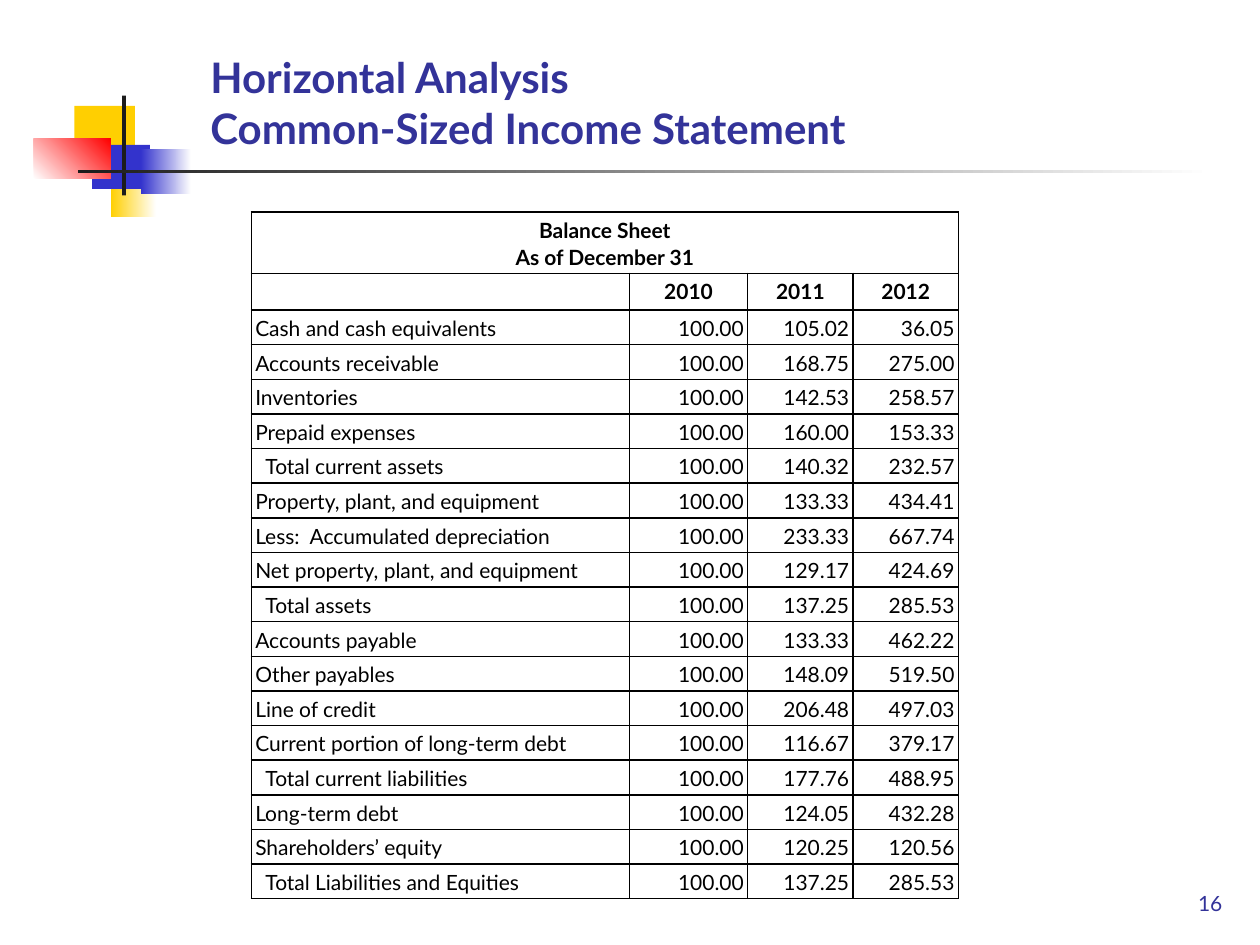
from lxml import etree
from pptx import Presentation
from pptx.dml.color import RGBColor
from pptx.enum.shapes import MSO_SHAPE
from pptx.enum.text import MSO_ANCHOR, MSO_AUTO_SIZE, PP_ALIGN
from pptx.oxml.ns import qn
from pptx.util import Pt

RECTANGLE = MSO_SHAPE.RECTANGLE
LEFT, CENTER, RIGHT = PP_ALIGN.LEFT, PP_ALIGN.CENTER, PP_ALIGN.RIGHT
BOTTOM, NO_AUTOFIT = MSO_ANCHOR.BOTTOM, MSO_AUTO_SIZE.NONE

THEME = {
    "font": "Lato",
    "title_size": 24, "body_size": 12,
    "heading": "333399", "text": "000000", "border": "000000",
    "yellow": "FFCF01", "blue": "3333CC", "red": "FF0000",
    "dark": "1C1C1C", "white": "FFFFFF",
}


def style_text(paragraph, size, color, align, bold=False):
    paragraph.alignment = align
    for run in paragraph.runs:
        values = {"name": THEME["font"], "size": Pt(THEME[size]), "bold": bold}
        for attribute, value in values.items():
            setattr(run.font, attribute, value)
        run.font.color.rgb = RGBColor.from_string(THEME[color])


def border_cell(cell):
    properties = cell._tc.get_or_add_tcPr()
    for position, side in enumerate(("lnL", "lnR", "lnT", "lnB")):
        line = etree.Element(qn(f"a:{side}"), w=str(Pt(1)))
        fill = etree.SubElement(line, qn("a:solidFill"))
        etree.SubElement(fill, qn("a:srgbClr"), val=THEME["border"])
        properties.insert(position, line)


prs = Presentation()
prs.slide_width, prs.slide_height = Pt(720), Pt(540)
slide = prs.slides.add_slide(prs.slide_layouts[5])

# Corner ornament: left, top, width, height, colours from start to end, angle
ornament = [
    (63.4, 86.4, 25.9, 37.4, ("yellow", "white"), 0),
    (42.5, 60.5, 34.6, 25.2, ("yellow",), 0),
    (52.6, 82.8, 33.1, 25.2, ("blue",), 0),
    (80.6, 85, 28.8, 25.9, ("blue", "white"), 0),
    (19.4, 79.2, 43.9, 23, ("white", "red"), 45),
    (69.8, 54.7, 2.2, 56.9, ("dark",), 0),
    (44.6, 97.2, 648, 1.6, ("dark", "white"), 0),
]
for left, top, width, height, colors, angle in ornament:
    block = slide.shapes.add_shape(RECTANGLE, Pt(left), Pt(top), Pt(width), Pt(height))
    block.shadow.inherit = False
    block.line.fill.background()
    if len(colors) == 1:
        block.fill.solid()
        block.fill.fore_color.rgb = RGBColor.from_string(THEME[colors[0]])
    else:
        block.fill.gradient()
        block.fill.gradient_angle = angle
        for position, (stop, color) in enumerate(zip(block.fill.gradient_stops, colors)):
            stop.position = position
            stop.color.rgb = RGBColor.from_string(THEME[color])

# Title
title = slide.shapes.title
title.left, title.top, title.width, title.height = Pt(113), Pt(49), Pt(493), Pt(41.8)
title.text_frame.text = "Horizontal Analysis\vCommon-Sized Income Statement"
title.text_frame.auto_size = NO_AUTOFIT
title.text_frame.vertical_anchor = BOTTOM
style_text(title.text_frame.paragraphs[0], "title_size", "heading", LEFT, bold=True)

# Slide number
page_number = slide.shapes.add_textbox(Pt(541.4), Pt(491), Pt(164.2), Pt(36))
page_number.text_frame.word_wrap = True
page_number.text_frame.vertical_anchor = BOTTOM
page_number.text_frame.text = "16"
style_text(page_number.text_frame.paragraphs[0], "body_size", "heading", RIGHT)

# Balance sheet; every account starts from the 2010 base of 100
accounts = [
    ("Cash and cash equivalents", "105.02", "36.05"),
    ("Accounts receivable", "168.75", "275.00"),
    ("Inventories", "142.53", "258.57"),
    ("Prepaid expenses", "160.00", "153.33"),
    ("Total current assets", "140.32", "232.57"),
    ("Property, plant, and equipment", "133.33", "434.41"),
    ("Less:  Accumulated depreciation", "233.33", "667.74"),
    ("Net property, plant, and equipment", "129.17", "424.69"),
    ("Total assets", "137.25", "285.53"),
    ("Accounts payable", "133.33", "462.22"),
    ("Other payables", "148.09", "519.50"),
    ("Line of credit", "206.48", "497.03"),
    ("Current portion of long-term debt", "116.67", "379.17"),
    ("Total current liabilities", "177.76", "488.95"),
    ("Long-term debt", "124.05", "432.28"),
    ("Shareholders’ equity", "120.25", "120.56"),
    ("Total Liabilities and Equities", "137.25", "285.53"),
]
rows = [("Balance Sheet\nAs of December 31", "", "", ""), ("", "2010", "2011", "2012")]
rows += [(account, "100.00", *later_years) for account, *later_years in accounts]
column_widths = [216, 67.6, 60.2, 60.2]
row_heights = [35.2, 21] + [19.65] * len(accounts)

balance_sheet = slide.shapes.add_table(
    len(rows), len(column_widths), Pt(143.7), Pt(121),
    Pt(sum(column_widths)), Pt(sum(row_heights))).table
balance_sheet.first_row = balance_sheet.horz_banding = False
for column, width in zip(balance_sheet.columns, column_widths):
    column.width = Pt(width)
for row, height in zip(balance_sheet.rows, row_heights):
    row.height = Pt(height)

for row_index, values in enumerate(rows):
    is_header = row_index < 2
    for column_index, value in enumerate(values):
        cell = balance_sheet.cell(row_index, column_index)
        cell.fill.background()
        border_cell(cell)
        for side in ("left", "right", "top", "bottom"):
            setattr(cell, f"margin_{side}", Pt(2.2))
        if value.startswith("Total"):
            cell.margin_left = Pt(8)
        cell.text = value
        align = CENTER if is_header else RIGHT if column_index else LEFT
        for paragraph in cell.text_frame.paragraphs:
            paragraph.line_spacing = 1.07
            style_text(paragraph, "body_size", "text", align, bold=is_header)
            if not value:
                etree.SubElement(paragraph._p, qn("a:endParaRPr"),
                                 sz=str(THEME["body_size"] * 100))
balance_sheet.cell(0, 0).merge(balance_sheet.cell(0, len(column_widths) - 1))

prs.save("out.pptx")
